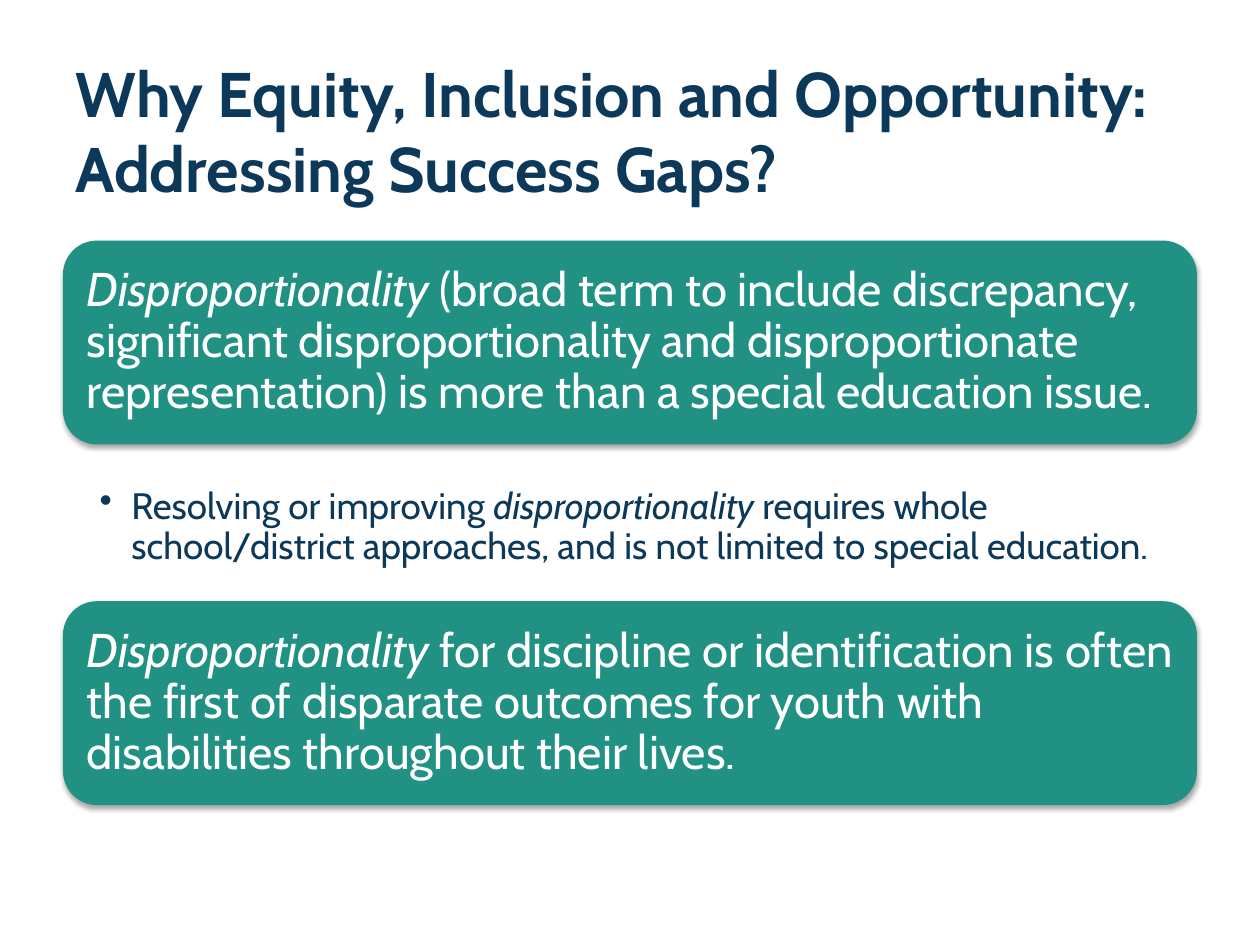
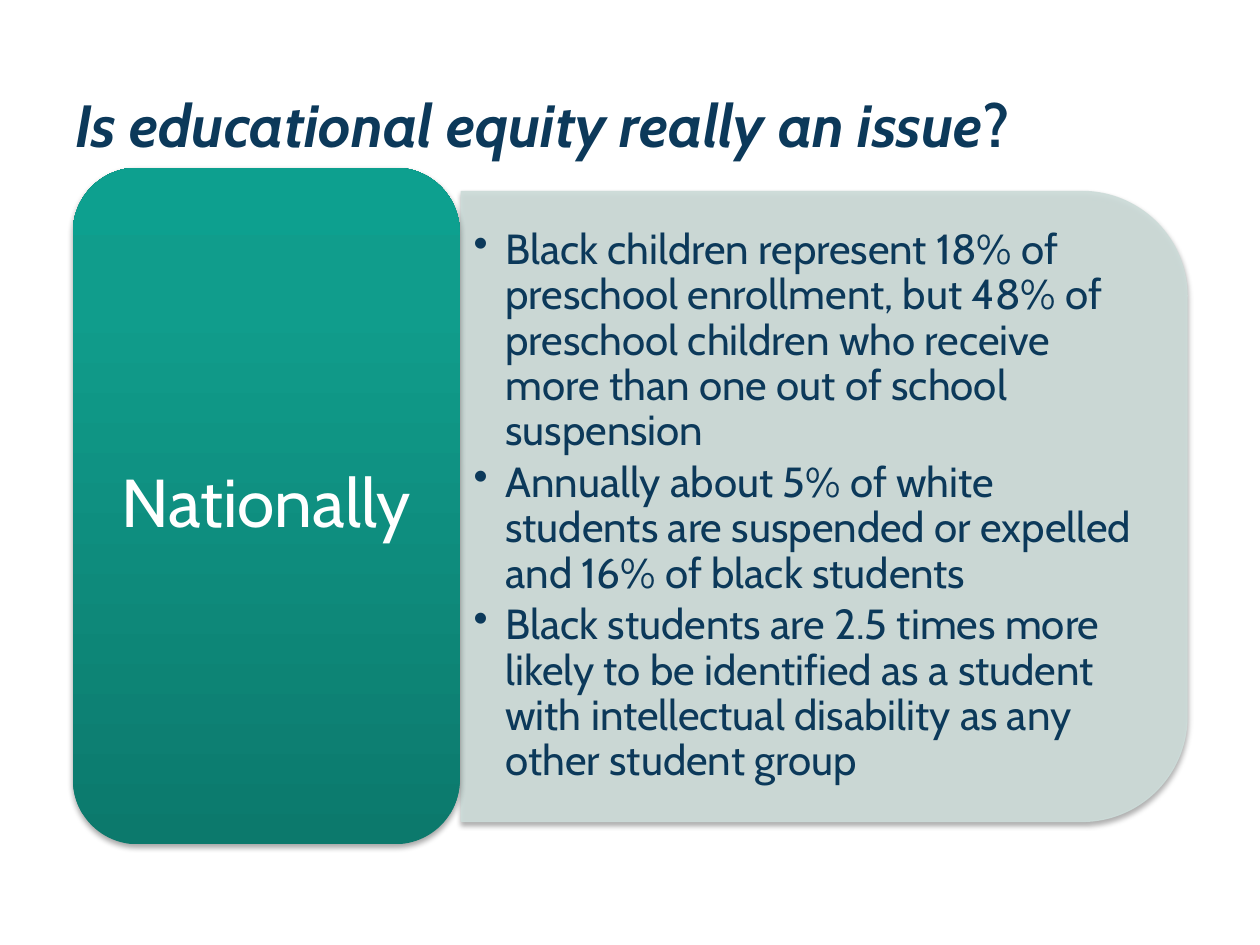
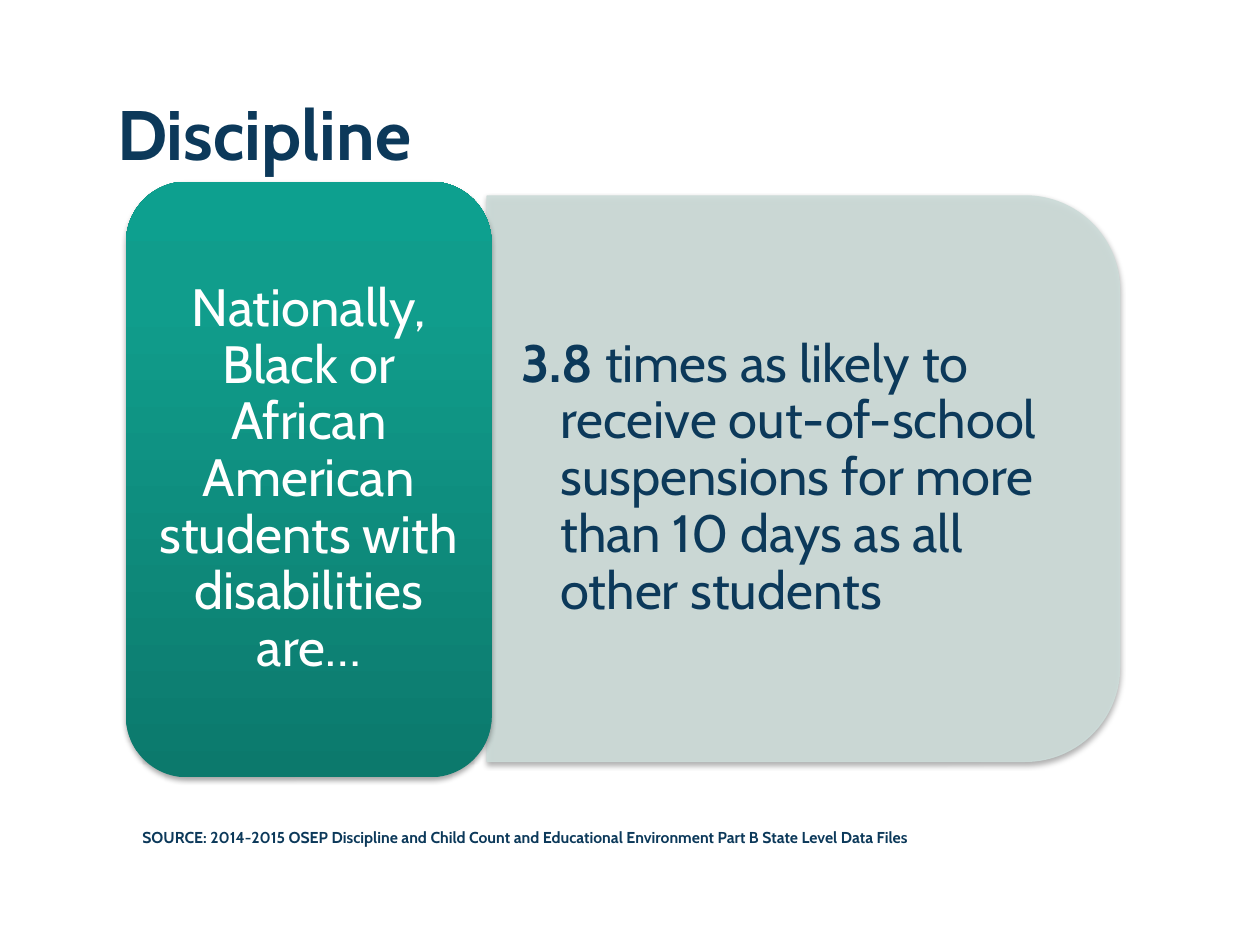
import dataclasses
import typing

import lxml.etree
import pptx
import pptx.dml.color
import pptx.enum.shapes
import pptx.enum.text
import pptx.oxml.ns
import pptx.util

Cm = pptx.util.Cm
Pt = pptx.util.Pt
Kind = pptx.enum.shapes.MSO_SHAPE
Align = pptx.enum.text.PP_ALIGN
Anchor = pptx.enum.text.MSO_ANCHOR
qn = pptx.oxml.ns.qn


# Shared look
@dataclasses.dataclass(frozen=True)
class Theme:
    font: str = "Cabin"
    navy: str = "0C395A"
    white: str = "FFFFFF"
    green: str = "219184"
    pale: str = "CDDCD9"
    fade: tuple = ((0, "0C796C"), (80, "109D8C"), (100, "0DA08F"))
    opaque: int = 90
    head: int = 36
    ask: int = 34
    topic: int = 40
    card: int = 27
    point: int = 21
    fact: int = 24
    label: float = 38.7
    large: int = 30
    note: int = 9


THEME = Theme()


# Lengths in the records below are centimetres
class Box(typing.NamedTuple):
    left: float
    top: float
    width: float
    height: float

    def inset(self, gap: float) -> "Box":
        return Box(self.left + gap, self.top + gap,
                   self.width - 2 * gap, self.height - 2 * gap)

    def place(self) -> tuple:
        return tuple(Cm(n) for n in self)


class Run(typing.NamedTuple):
    text: str
    bold: bool = False
    ital: bool = False


@dataclasses.dataclass(frozen=True)
class Style:
    size: float
    color: str = THEME.navy
    align: Align = Align.LEFT
    anchor: Anchor = Anchor.TOP
    pad: tuple = (0.25, 0.13, 0.25, 0.13)
    lines: float = 1.0
    after: float = 0.0  # share of the type size
    hang: float = 0.0
    bullet: bool = False


@dataclasses.dataclass(frozen=True)
class Pair:
    tab: Box
    edge: float
    label: str
    look: Style
    panel: Box
    gap: float
    body: list
    text: Style


# Text
def write(shape: typing.Any, paras: list, style: Style) -> None:
    frame = shape.text_frame
    frame.word_wrap = True
    frame.auto_size = pptx.enum.text.MSO_AUTO_SIZE.NONE
    frame.vertical_anchor = style.anchor
    (frame.margin_left, frame.margin_top,
     frame.margin_right, frame.margin_bottom) = (Cm(n) for n in style.pad)
    for i, runs in enumerate(paras):
        para = frame.add_paragraph() if i else frame.paragraphs[0]
        if style.hang:
            props = para._p.get_or_add_pPr()
            props.set("marL", str(Cm(style.hang)))
            props.set("indent", str(-Cm(style.hang)))
            if style.bullet:
                lxml.etree.SubElement(props, qn("a:buChar")).set("char", "•")
        para.alignment = style.align
        para.line_spacing = style.lines
        para.space_after = Pt(style.size * style.after)
        for part in runs:
            run = para.add_run()
            run.text = part.text
            font = run.font
            font.name, font.size = THEME.font, Pt(style.size)
            font.bold, font.italic = part.bold, part.ital
            font.color.rgb = pptx.dml.color.RGBColor.from_string(style.color)


def add_text(slide: typing.Any, box: Box, paras: list, style: Style) -> None:
    write(slide.shapes.add_textbox(*box.place()), paras, style)


def add_title(deck: typing.Any, box: Box, runs: list, style: Style) -> typing.Any:
    slide = deck.slides.add_slide(deck.slide_layouts[5])
    title = slide.shapes.title
    title.left, title.top, title.width, title.height = box.place()
    write(title, [runs], style)
    return slide


# Shapes
def add_stop(parent: typing.Any, color: str) -> typing.Any:
    node = lxml.etree.SubElement(parent, qn("a:srgbClr"))
    node.set("val", color)
    return node


def add_alpha(node: typing.Any, share: int) -> None:
    lxml.etree.SubElement(node, qn("a:alpha")).set("val", str(share * 1000))


def add_form(slide: typing.Any, kind: Kind, box: Box) -> typing.Any:
    shape = slide.shapes.add_shape(kind, *box.place())
    shape.line.fill.background()
    shape.shadow.inherit = False
    glow = lxml.etree.SubElement(
        shape._element.spPr.find(qn("a:effectLst")), qn("a:outerShdw"),
        blurRad=str(Pt(3.1)), dist=str(Pt(1.8)), dir="5400000", rotWithShape="0")
    add_alpha(add_stop(glow, "000000"), 35)
    return shape


def paint(fill: typing.Any, color: str) -> None:
    fill.solid()
    fill.fore_color.rgb = pptx.dml.color.RGBColor.from_string(color)


def add_card(slide: typing.Any, box: Box, runs: list) -> None:
    paint(add_form(slide, Kind.ROUNDED_RECTANGLE, box).fill, THEME.green)
    add_text(slide, box.inset(0.2), [runs], CARD)


def add_panel(slide: typing.Any, box: Box) -> None:
    # Turned a quarter, so width and height swap about the centre
    shift = (box.width - box.height) / 2
    turned = Box(box.left + shift, box.top - shift, box.height, box.width)
    shape = add_form(slide, Kind.ROUND_2_SAME_RECTANGLE, turned)
    shape.rotation = 90
    shape.line.width = Pt(0.75)
    for fill in (shape.fill, shape.line.fill):
        paint(fill, THEME.pale)
    for node in shape._element.spPr.iter(qn("a:srgbClr")):
        if node.get("val") == THEME.pale:
            add_alpha(node, THEME.opaque)


def add_tab(slide: typing.Any, box: Box) -> None:
    fill = add_form(slide, Kind.ROUNDED_RECTANGLE, box).fill
    fill.gradient()
    fill.gradient_angle = 90
    stops = fill.gradient_stops._gsLst
    for old in list(stops):
        stops.remove(old)
    for pos, color in THEME.fade:
        stop = lxml.etree.SubElement(stops, qn("a:gs"))
        stop.set("pos", str(pos * 1000))
        add_stop(stop, color)


def add_pair(slide: typing.Any, pair: Pair) -> None:
    add_panel(slide, pair.panel)
    left, top, width, height = pair.panel
    inner = Box(left, top + pair.gap, width - pair.gap, height - 2 * pair.gap)
    add_text(slide, inner, pair.body, pair.text)
    add_tab(slide, pair.tab)
    add_text(slide, pair.tab.inset(pair.edge), [[Run(pair.label)]], pair.look)


# Text styles
HEAD = Style(THEME.head, anchor=Anchor.BOTTOM)
CARD = Style(THEME.card, THEME.white, anchor=Anchor.MIDDLE,
             pad=(0.28,) * 4, lines=0.9, after=0.35)
POINT = Style(THEME.point, pad=(0.74, 0.1, 0.53, 0.1), lines=0.9, after=0.2,
              hang=0.64, bullet=True)
FACT = Style(THEME.fact, anchor=Anchor.MIDDLE, lines=0.9, after=0.15,
             hang=0.64, bullet=True)
RATE = Style(THEME.large, anchor=Anchor.MIDDLE, pad=(0.69, 0.36, 0.69, 0.36),
             lines=0.9, after=0.15, hang=0.79)
LABEL = Style(THEME.label, THEME.white, Align.CENTER, Anchor.MIDDLE,
              (0.41, 0.2, 0.41, 0.2), 0.9, 0.35)
GROUP = dataclasses.replace(LABEL, size=THEME.large, pad=(0.3, 0.15, 0.3, 0.15))

# Content
TERM = Run("Disproportionality", ital=True)
CARDS = (
    (4.85, " (broad term to include discrepancy, significant disproportionality "
           "and disproportionate representation) is more than a special "
           "education issue."),
    (12.12, " for discipline or identification is often the first of disparate "
            "outcomes for youth with disabilities throughout their lives."),
)
NATION = Pair(
    tab=Box(1.47, 3.38, 7.8, 13.64), edge=0.38, label="Nationally", look=LABEL,
    panel=Box(9.3, 3.86, 14.63, 12.7), gap=0.61, text=FACT,
    body=[
        [Run("Black children represent 18% of preschool enrollment, but 48% of "
             "preschool children who receive more than one out of school "
             "suspension")],
        [Run("Annually about 5% of white students are suspended or expelled "
             "and 16% of black students")],
        [Run("Black students are 2.5 times more likely to be identified as a "
             "student with intellectual disability as any other student group")],
    ])
RISK = Pair(
    tab=Box(2.54, 3.66, 7.37, 12.01), edge=0.36, look=GROUP,
    label="Nationally, Black or African American students with disabilities are…",
    panel=Box(9.82, 3.95, 12.75, 11.4), gap=0.57, text=RATE,
    body=[[Run("3.8 ", bold=True),
           Run("times as likely to receive out-of-school suspensions for more "
               "than 10 days as all other students")]])


def main() -> None:
    deck = pptx.Presentation()
    deck.slide_width, deck.slide_height = Cm(25.4), Cm(19.05)

    # Why equity
    slide = add_title(deck, Box(1.27, 1.17, 22.86, 3.1), [
        Run("Why Equity, Inclusion and Opportunity: Addressing Success Gaps?",
            bold=True)], HEAD)
    for top, text in CARDS:
        add_card(slide, Box(1.27, top, 22.86, 4.11), [TERM, Run(text)])
    add_text(slide, Box(1.27, 9.73, 22.86, 1.83), [[
        Run("Resolving or improving "),
        Run("disproportionality", ital=True),
        Run(" requires whole school/district approaches, and is not limited to "
            "special education.")]], POINT)

    # National figures
    slide = add_title(deck, Box(1.27, 0.25, 22.86, 3.1), [
        Run("Is educational equity really an issue", bold=True, ital=True),
        Run("?", bold=True)], dataclasses.replace(HEAD, size=THEME.ask))
    add_pair(slide, NATION)

    # Discipline
    slide = add_title(deck, Box(2.11, 1.7, 15.54, 1.96),
                      [Run("Discipline", bold=True)], Style(THEME.topic))
    add_pair(slide, RISK)
    add_text(slide, Box(2.62, 16.56, 16.51, 1.22), [[
        Run("SOURCE: 2014-2015 OSEP Discipline and Child Count and Educational "
            "Environment Part B State Level Data Files", bold=True)]],
        Style(THEME.note))

    deck.save("out.pptx")


if __name__ == "__main__":
    main()
